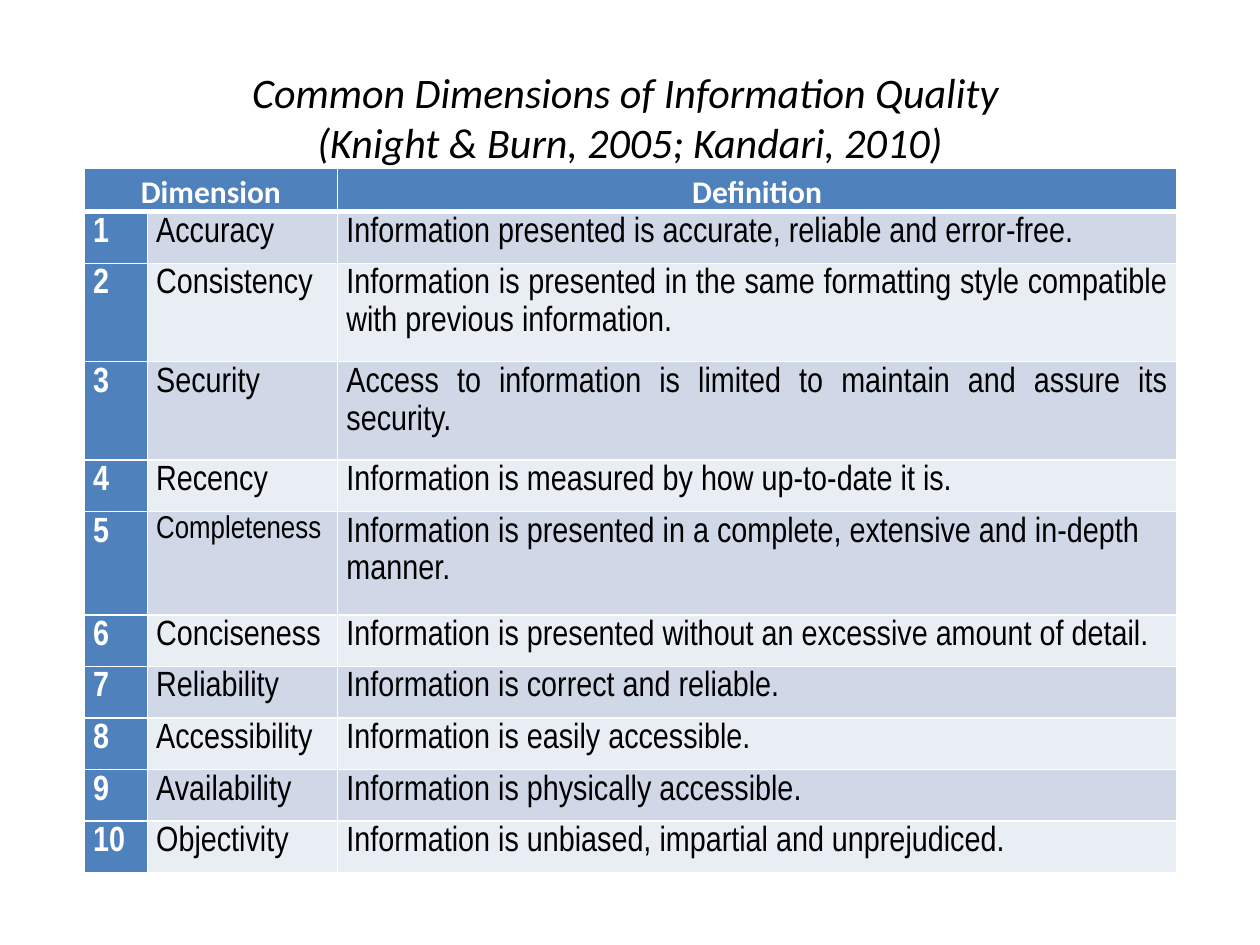
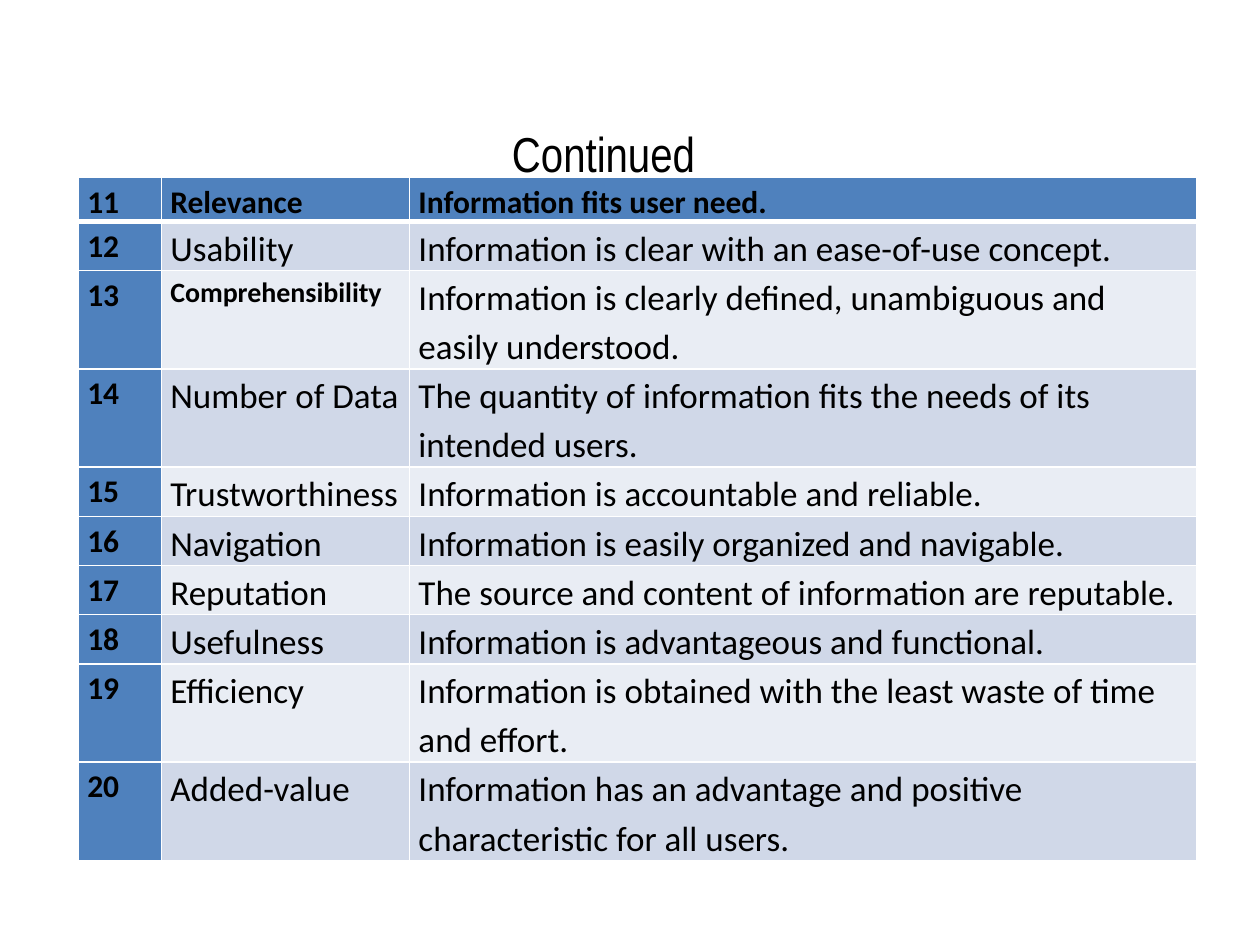
from dataclasses import dataclass, replace
from typing import Optional

from lxml.etree import SubElement
from pptx import Presentation
from pptx.dml.color import RGBColor
from pptx.enum.text import MSO_ANCHOR, PP_ALIGN as Align
from pptx.oxml.ns import qn
from pptx.util import Pt


@dataclass(frozen=True)
class TextStyle:
    size: float
    font: str
    colour: str
    bold: bool = False
    italic: bool = False
    align: Align = Align.LEFT


@dataclass(frozen=True)
class Theme:
    black: str = "000000"
    white: str = "FFFFFF"
    accent: str = "4F81BD"
    bands: tuple[str, str] = ("D0D8E8", "E9EDF4")
    sans: str = "Calibri"
    narrow: str = "Arial Narrow"
    title: float = 24
    large_title: float = 28
    body: float = 20
    label: float = 18
    small_label: float = 16
    line_spacing: float = 1.15
    cell_inset: float = 5.1
    rule: float = 1
    header_rule: float = 3


THEME = Theme()


@dataclass(frozen=True)
class Box:
    left: float
    top: float
    width: float
    height: float


@dataclass(frozen=True)
class Dimension:
    name: str
    definition: str
    height: float
    name_style: Optional[TextStyle] = None
    justified: bool = False


@dataclass(frozen=True)
class TableLook:
    left: float
    top: float
    columns: tuple[float, float, float]
    header: TextStyle
    number: TextStyle
    body: TextStyle


def add_run(paragraph, text: str, style: TextStyle) -> None:
    run = paragraph.add_run()
    run.text = text
    font = run.font
    font.size, font.name = Pt(style.size), style.font
    font.bold, font.italic = style.bold, style.italic
    font.color.rgb = RGBColor.from_string(style.colour)


def add_title(slide, box: Box, lines: list[str], style: TextStyle) -> None:
    frame = slide.shapes.add_textbox(
        Pt(box.left), Pt(box.top), Pt(box.width), Pt(box.height)).text_frame
    frame.word_wrap = True
    frame.vertical_anchor = MSO_ANCHOR.MIDDLE
    paragraph = frame.paragraphs[0]
    paragraph.alignment = style.align
    for index, line in enumerate(lines):
        if index:
            paragraph.add_line_break()
        add_run(paragraph, line, style)


def set_borders(cell, top: float, bottom: float) -> None:
    properties = cell._tc.get_or_add_tcPr()
    widths = {"a:lnL": THEME.rule, "a:lnR": THEME.rule, "a:lnT": top, "a:lnB": bottom}
    for tag, width in widths.items():
        line = SubElement(properties, qn(tag), w=str(Pt(width)))
        fill = SubElement(line, qn("a:solidFill"))
        SubElement(fill, qn("a:srgbClr"), val=THEME.white)


def fill_cell(cell, text: str, style: TextStyle, colour: str, row: int) -> None:
    set_borders(cell,
                top=THEME.header_rule if row == 1 else THEME.rule,
                bottom=THEME.header_rule if row == 0 else THEME.rule)
    cell.fill.solid()
    cell.fill.fore_color.rgb = RGBColor.from_string(colour)
    cell.margin_left = cell.margin_right = Pt(THEME.cell_inset)
    cell.margin_top = cell.margin_bottom = 0
    paragraph = cell.text_frame.paragraphs[0]
    paragraph.alignment = style.align
    paragraph.line_spacing = THEME.line_spacing
    if text:
        add_run(paragraph, text, style)


def add_dimension_table(slide, look: TableLook, header: tuple[str, str, str],
                        header_height: float, dimensions: list[Dimension],
                        first_number: int) -> None:
    """Draw a header row and numbered, banded rows; an empty header cell joins its left one."""
    heights = [header_height] + [item.height for item in dimensions]
    table = slide.shapes.add_table(
        len(heights), len(look.columns), Pt(look.left), Pt(look.top),
        Pt(sum(look.columns)), Pt(sum(heights))).table
    table.first_row = table.horz_banding = False
    for column, width in zip(table.columns, look.columns):
        column.width = Pt(width)
    for row, height in zip(table.rows, heights):
        row.height = Pt(height)

    for column, text in enumerate(header):
        fill_cell(table.cell(0, column), text, look.header, THEME.accent, 0)
        if not text:
            table.cell(0, column - 1).merge(table.cell(0, column))

    for row, item in enumerate(dimensions, start=1):
        band = THEME.bands[(row - 1) % 2]
        definition_style = replace(look.body, align=Align.JUSTIFY) if item.justified else look.body
        fill_cell(table.cell(row, 0), str(first_number + row - 1), look.number, THEME.accent, row)
        fill_cell(table.cell(row, 1), item.name, item.name_style or look.body, band, row)
        fill_cell(table.cell(row, 2), item.definition, definition_style, band, row)


def add_common_dimensions(slide) -> None:
    one_line, two_lines, tall = 29.5, 56.2, 59
    body = TextStyle(THEME.body, THEME.narrow, THEME.black)
    look = TableLook(
        left=48.2, top=96, columns=(36, 108.7, 479.5),
        header=TextStyle(THEME.label, THEME.sans, THEME.white, bold=True, align=Align.CENTER),
        number=replace(body, colour=THEME.white, bold=True),
        body=body)
    dimensions = [
        Dimension("Accuracy", "Information presented is accurate, reliable and error-free.",
                  one_line, justified=True),
        Dimension("Consistency", "Information is presented in the same formatting style "
                  "compatible with previous information.", two_lines, justified=True),
        Dimension("Security", "Access to information is limited to maintain and assure its "
                  "security.", two_lines, justified=True),
        Dimension("Recency", "Information is measured by how up-to-date it is.",
                  one_line, justified=True),
        Dimension("Completeness", "Information is presented in a complete, extensive and "
                  "in-depth manner.", tall, name_style=replace(body, size=THEME.label)),
        Dimension("Conciseness", "Information is presented without an excessive amount of "
                  "detail.", one_line),
        Dimension("Reliability", "Information is correct and reliable.", one_line),
        Dimension("Accessibility", "Information is easily accessible.", one_line),
        Dimension("Availability", "Information is physically accessible.", one_line),
        Dimension("Objectivity", "Information is unbiased, impartial and unprejudiced.", one_line),
    ]
    add_title(slide, Box(36, 21.6, 648, 90),
              ["Common Dimensions of Information Quality ", "(Knight & Burn, 2005; Kandari, 2010)"],
              TextStyle(THEME.title, THEME.sans, THEME.black, italic=True, align=Align.CENTER))
    add_dimension_table(slide, look, ("Dimension", "", "Definition"), 25, dimensions, 1)


def add_continued_dimensions(slide) -> None:
    one_line, two_lines = 28.1, 56.2
    body = TextStyle(THEME.body, THEME.sans, THEME.black)
    label = replace(body, size=THEME.label, bold=True)
    look = TableLook(left=44.8, top=101.5, columns=(47.5, 141.8, 450),
                     header=label, number=label, body=body)
    dimensions = [
        Dimension("Usability", "Information is clear with an ease-of-use concept.", one_line),
        Dimension("Comprehensibility", "Information is clearly defined, unambiguous and easily "
                  "understood.", two_lines, name_style=replace(label, size=THEME.small_label)),
        Dimension("Number of Data", "The quantity of information fits the needs of its intended "
                  "users.", two_lines),
        Dimension("Trustworthiness", "Information is accountable and reliable.", one_line),
        Dimension("Navigation", "Information is easily organized and navigable.", one_line),
        Dimension("Reputation", "The source and content of information are reputable.", one_line),
        Dimension("Usefulness", "Information is advantageous and functional.", one_line),
        Dimension("Efficiency", "Information is obtained with the least waste of time and "
                  "effort.", two_lines),
        Dimension("Added-value", "Information has an advantage and positive characteristic for "
                  "all users.", two_lines),
    ]
    add_dimension_table(slide, look, ("11", "Relevance", "Information fits user need."),
                        25, dimensions, 12)
    add_title(slide, Box(180, 67, 336, 41), ["Continued "],
              TextStyle(THEME.large_title, THEME.narrow, THEME.black, align=Align.CENTER))


def main() -> None:
    deck = Presentation()
    deck.slide_width, deck.slide_height = Pt(720), Pt(540)
    blank = deck.slide_layouts[6]
    for build in (add_common_dimensions, add_continued_dimensions):
        build(deck.slides.add_slide(blank))
    deck.save("out.pptx")


if __name__ == "__main__":
    main()
